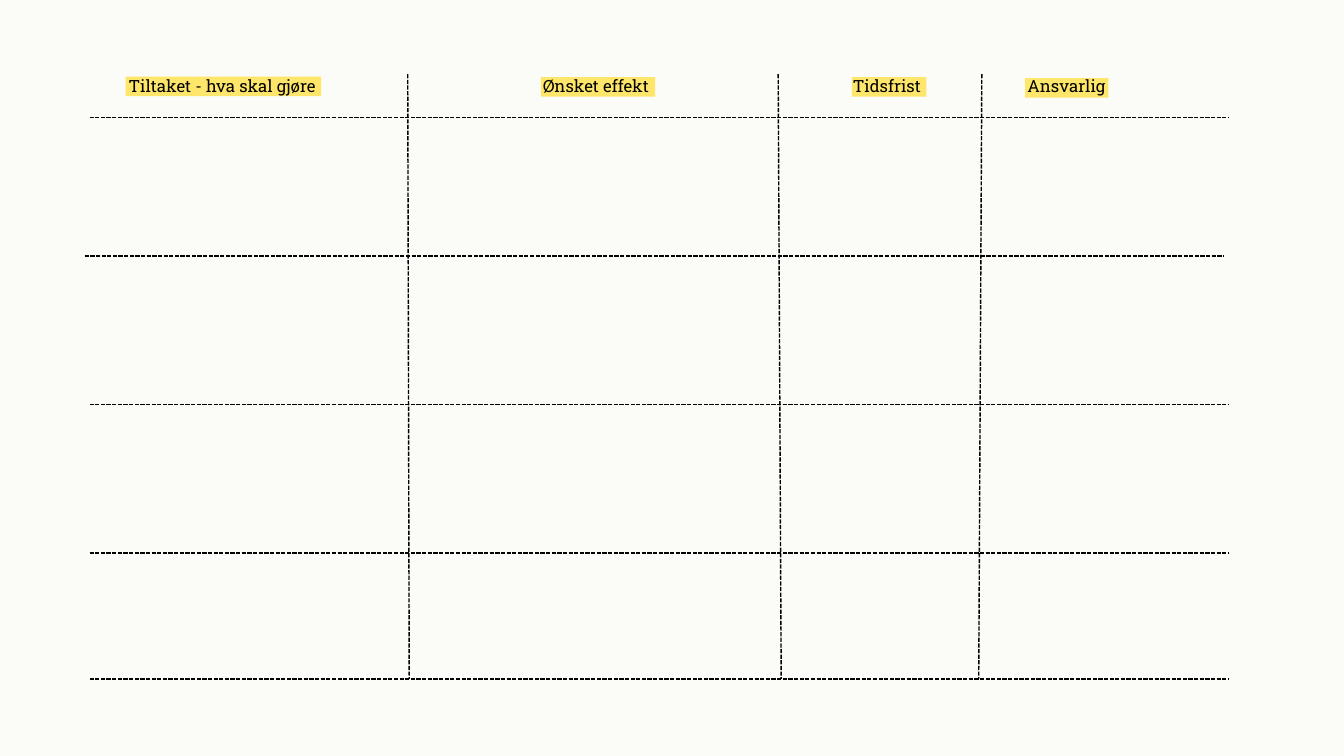
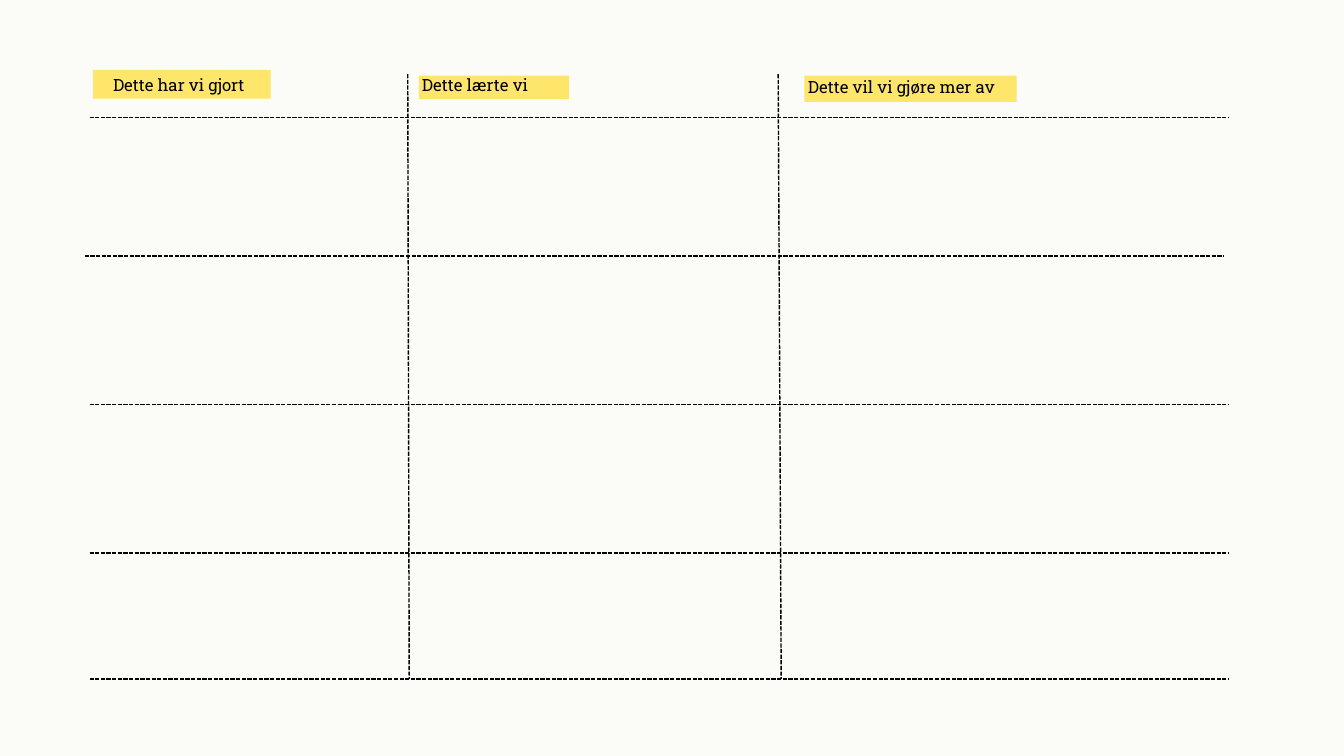
"""Build two dotted planning grids: one for measures, one for lessons learned."""
from dataclasses import dataclass

from lxml import etree
from pptx import Presentation
from pptx.dml.color import RGBColor
from pptx.enum.dml import MSO_LINE
from pptx.enum.shapes import MSO_CONNECTOR, MSO_SHAPE
from pptx.enum.text import MSO_ANCHOR, MSO_AUTO_SIZE, PP_ALIGN
from pptx.oxml.ns import qn
from pptx.slide import Slide
from pptx.util import Pt

STRAIGHT = MSO_CONNECTOR.STRAIGHT
RECTANGLE = MSO_SHAPE.RECTANGLE
DOTTED = MSO_LINE.SQUARE_DOT
MIDDLE = MSO_ANCHOR.MIDDLE
GROW = MSO_AUTO_SIZE.SHAPE_TO_FIT_TEXT
LEFT = PP_ALIGN.LEFT

PAPER = RGBColor(0xFB, 0xFC, 0xF7)
MARKER = RGBColor(0xFE, 0xE6, 0x6A)
INK = RGBColor(0x00, 0x00, 0x00)

FONT = "Roboto Slab"
FONT_SIZE = 24
INSET = 4.5
TEXT_HEIGHT = 40.3


@dataclass(frozen=True)
class Rule:
    x1: float
    y1: float
    x2: float
    y2: float


@dataclass(frozen=True)
class Marker:
    left: float
    top: float
    width: float
    height: float


@dataclass(frozen=True)
class Heading:
    text: str
    left: float
    top: float
    width: float
    marker: Marker
    wrap: bool = False


GRID_LEFT, GRID_WIDTH = 128, 1628
GRID_TOP, GRID_BOTTOM = 106, 970
SHIFTED_LEFT = 121

ROW_RULES = [
    Rule(left, y, left + GRID_WIDTH, y)
    for left, y in (
        (GRID_LEFT, 168),
        (SHIFTED_LEFT, 366),
        (GRID_LEFT, 578),
        (GRID_LEFT, 790),
        (GRID_LEFT, GRID_BOTTOM),
    )
]
COLUMN_RULES = [
    Rule(top_x, GRID_TOP, bottom_x, GRID_BOTTOM)
    for top_x, bottom_x in ((582.5, 584.6), (1111.7, 1116), (1402.6, 1398.2))
]

MEASURE_HEADINGS = [
    Heading("Tiltaket - hva skal gjøre", 179.3, 103, 279.4,
            Marker(179.3, 109.4, 279.4, 28)),
    Heading("Ønsket effekt", 771.1, 103, 163.4,
            Marker(772.6, 110.2, 163.4, 28)),
    Heading("Tidsfrist", 1213.9, 103, 106.6,
            Marker(1216.8, 110.2, 106.6, 28)),
    Heading("Ansvarlig", 1463, 103, 121,
            Marker(1464.5, 111.6, 118.8, 28)),
]
LESSON_HEADINGS = [
    Heading("Dette har vi gjort", 157, 100.8, 203.8,
            Marker(133.2, 100, 253.4, 41), wrap=True),
    Heading("Dette lærte vi", 598.3, 100.8, 203.8,
            Marker(598.3, 108, 214.6, 33.8), wrap=True),
    Heading("Dette vil vi gjøre mer av", 1149.8, 103.7, 593.3,
            Marker(1149.1, 108, 303.1, 37.4), wrap=True),
]


def draw_rule(page: Slide, rule: Rule) -> None:
    connector = page.shapes.add_connector(
        STRAIGHT, Pt(rule.x1), Pt(rule.y1), Pt(rule.x2), Pt(rule.y2))
    connector.line.color.rgb = INK
    connector.line.width = Pt(2)
    connector.line.dash_style = DOTTED
    etree.SubElement(connector.element.spPr, qn("a:effectLst"))


def draw_marker(page: Slide, marker: Marker) -> None:
    shape = page.shapes.add_shape(
        RECTANGLE, Pt(marker.left), Pt(marker.top),
        Pt(marker.width), Pt(marker.height))
    shape.shadow.inherit = False
    shape.fill.solid()
    shape.fill.fore_color.rgb = MARKER
    shape.line.fill.background()


def draw_heading(page: Slide, heading: Heading) -> None:
    draw_marker(page, heading.marker)
    box = page.shapes.add_textbox(
        Pt(heading.left), Pt(heading.top), Pt(heading.width), Pt(TEXT_HEIGHT))
    frame = box.text_frame
    frame.text = heading.text
    frame.word_wrap = heading.wrap
    frame.auto_size = GROW
    frame.vertical_anchor = MIDDLE
    frame.margin_left = frame.margin_right = Pt(INSET)
    frame.margin_top = frame.margin_bottom = Pt(INSET)
    para = frame.paragraphs[0]
    para.alignment = LEFT
    for span in para.runs:
        span.font.name = FONT
        span.font.size = Pt(FONT_SIZE)
        span.font.color.rgb = INK


def add_grid_page(deck: Presentation, headings: list[Heading]) -> None:
    page = deck.slides.add_slide(deck.slide_layouts[6])
    for rule in ROW_RULES + COLUMN_RULES[:len(headings) - 1]:
        draw_rule(page, rule)
    for heading in headings:
        draw_heading(page, heading)


def main() -> None:
    deck = Presentation()
    deck.slide_width = Pt(1920)
    deck.slide_height = Pt(1080)
    paper = deck.slide_master.background.fill
    paper.solid()
    paper.fore_color.rgb = PAPER
    for headings in (MEASURE_HEADINGS, LESSON_HEADINGS):
        add_grid_page(deck, headings)
    deck.save("out.pptx")


if __name__ == "__main__":
    main()
